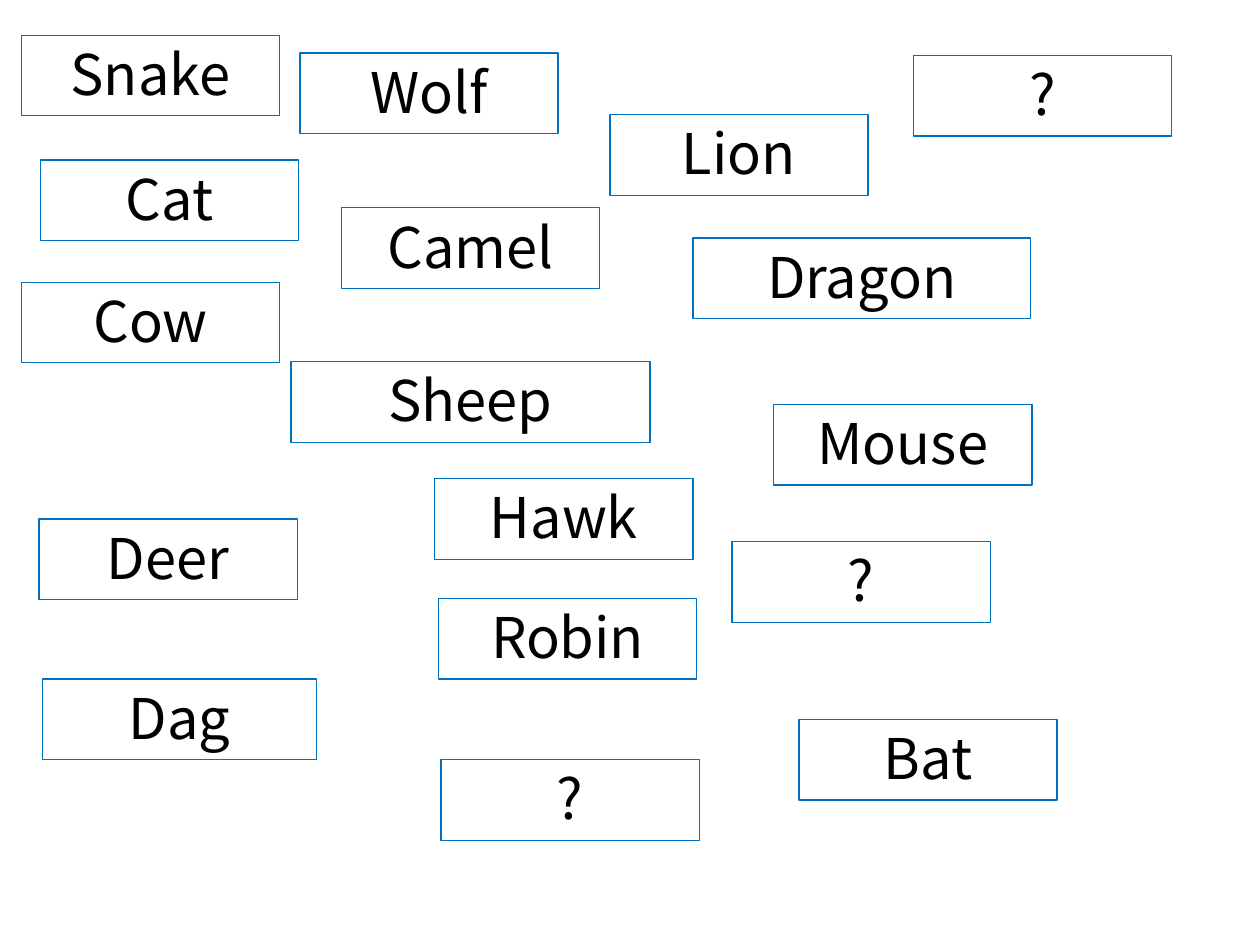
from dataclasses import dataclass

from pptx import Presentation
from pptx import util as u
from pptx.dml.color import RGBColor
from pptx.enum import text


@dataclass(frozen=True)
class Theme:
    font: str = "Noto Sans CJK KR"
    size: float = 32
    ink: str = "000000"
    border: str = "0070C0"
    border_width: float = 0.75


@dataclass(frozen=True)
class Card:
    """An animal name; lengths are hundredths of the slide's width or height unit."""
    name: str
    left: float
    top: float
    width: float = 2.05


THEME = Theme()
SLIDE_W, SLIDE_H = 10, 7.5
CARD_H = 0.64

CARDS = (
    Card("Snake", 0.17, 0.28),
    Card("Cat", 0.32, 1.27),
    Card("Cow", 0.17, 2.24),
    Card("Wolf", 2.38, 0.42),
    Card("Camel", 2.71, 1.65),
    Card("Sheep", 2.31, 2.87, width=2.85),
    Card("Deer", 0.31, 4.12),
    Card("Lion", 4.84, 0.91),
    Card("Dragon", 5.5, 1.89, width=2.68),
    Card("Hawk", 3.45, 3.8),
    Card("Mouse", 6.14, 3.21),
    Card("Dag", 0.34, 5.39, width=2.17),
    Card("Bat", 6.34, 5.71),
    Card("?", 7.25, 0.44),
    Card("?", 5.81, 4.3),
    Card("Robin", 3.48, 4.75),
    Card("?", 3.5, 6.03),
)


def write(tf, words: str, *, font: str, size: float, color: str,
          align=text.PP_ALIGN.CENTER) -> None:
    p = tf.paragraphs[0]
    p.alignment = align
    r = p.add_run()
    r.text = words
    r.font.name = font
    r.font.size = u.Pt(size)
    r.font.color.rgb = RGBColor.from_string(color)


def draw_card(s, card: Card) -> None:
    sp = s.shapes.add_textbox(*map(u.Inches, (card.left, card.top, card.width, CARD_H)))
    sp.line.color.rgb = RGBColor.from_string(THEME.border)
    sp.line.width = u.Pt(THEME.border_width)
    tf = sp.text_frame
    tf.word_wrap = True
    tf.auto_size = text.MSO_AUTO_SIZE.NONE
    tf.vertical_anchor = text.MSO_ANCHOR.MIDDLE
    tf.margin_top, tf.margin_bottom = 0, u.Inches(0.04)
    write(tf, card.name, font=THEME.font, size=THEME.size, color=THEME.ink)


def main() -> None:
    prs = Presentation()
    prs.slide_width, prs.slide_height = u.Inches(SLIDE_W), u.Inches(SLIDE_H)
    s = prs.slides.add_slide(prs.slide_layouts[6])
    for card in CARDS:
        draw_card(s, card)
    prs.save("out.pptx")


if __name__ == "__main__":
    main()
